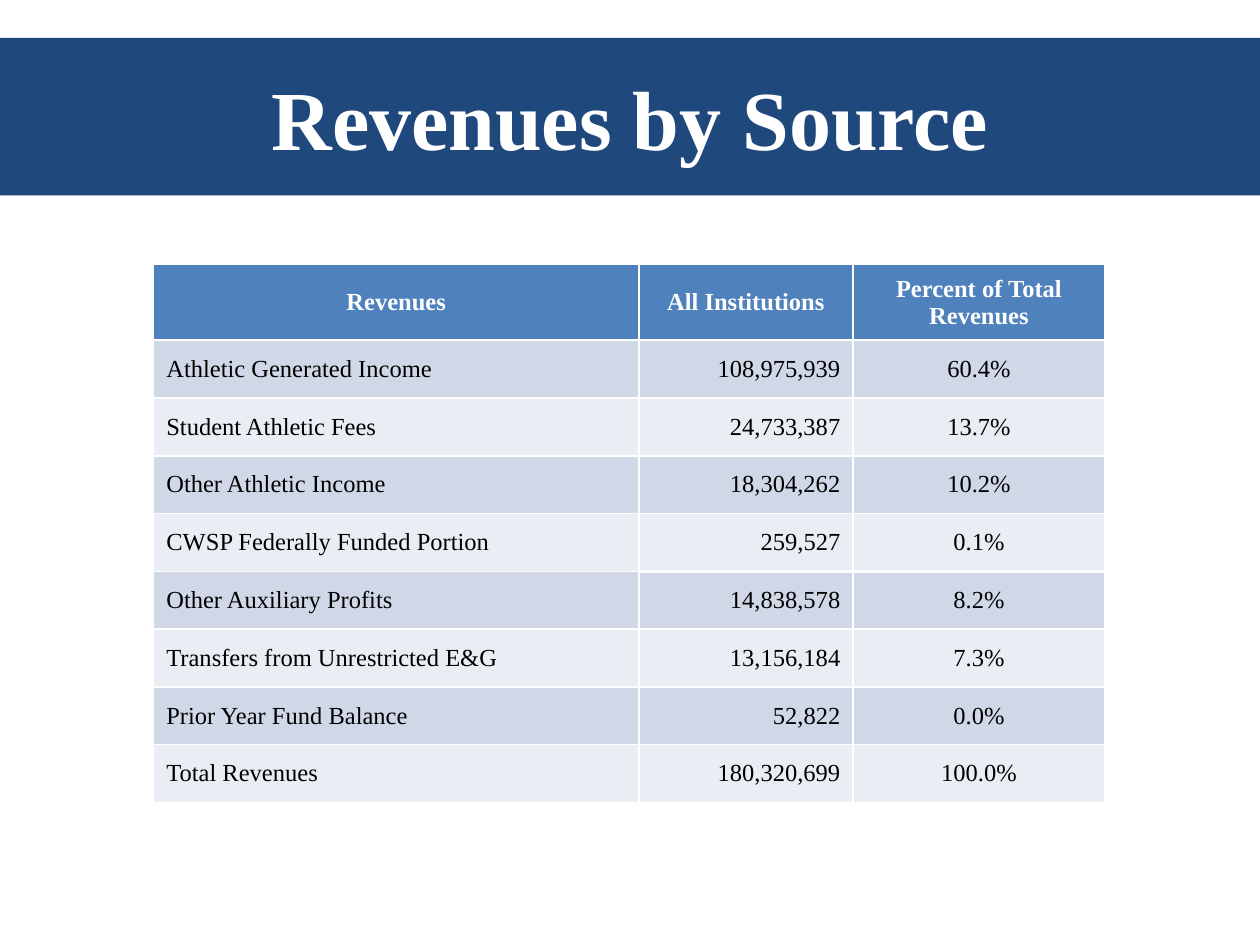
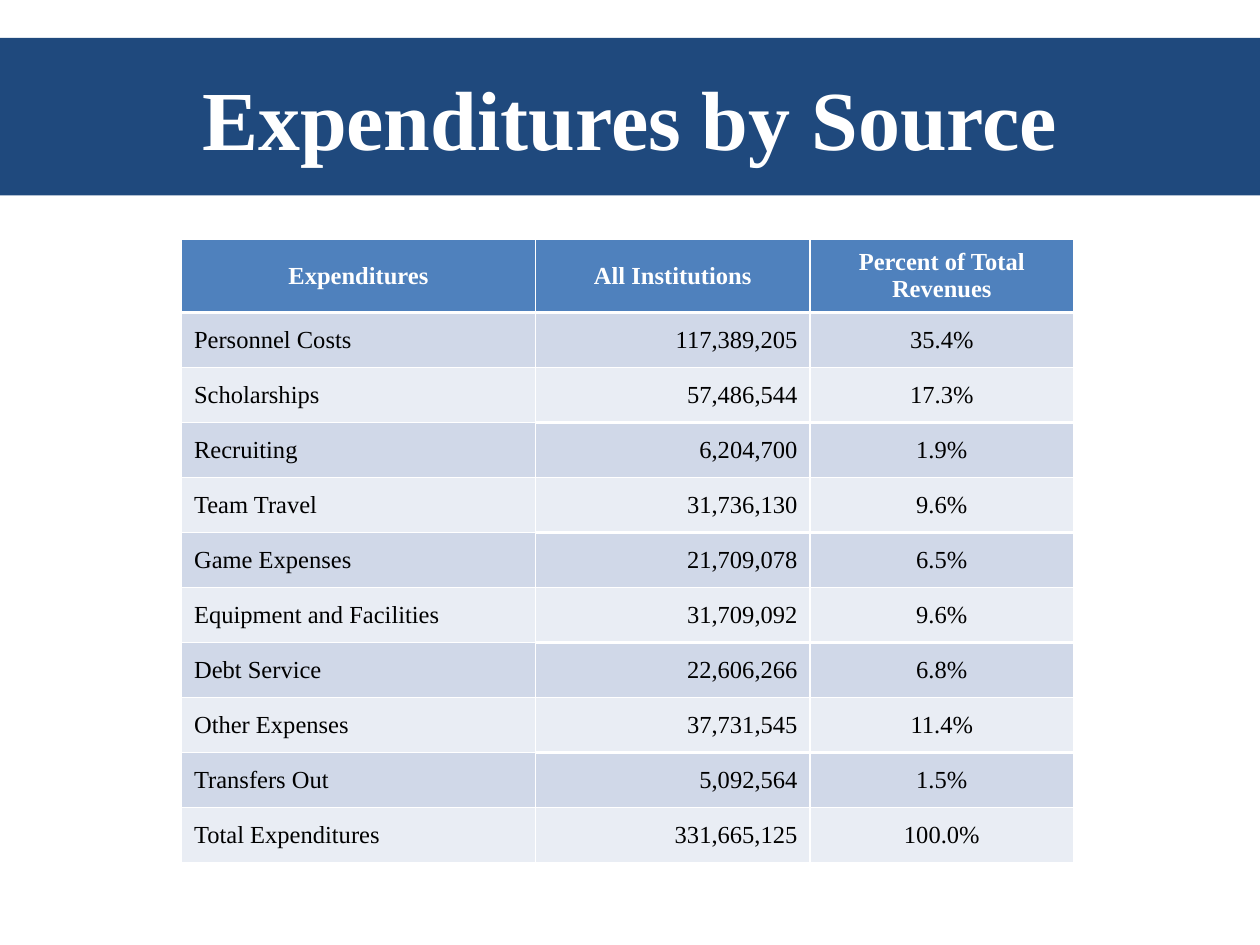
from lxml import etree
from pptx import Presentation
from pptx import util as u
from pptx.dml.color import RGBColor
from pptx.enum import shapes, text
from pptx.oxml.ns import qn

COLORS = {"band": "1F497D", "header": "4F81BD", "odd": "D0D8E8",
          "even": "E9EDF4", "white": "FFFFFF", "black": "000000"}
FONT = "Times New Roman"
TITLE = {"name": FONT, "size": u.Pt(48), "bold": True}
HEADER = {"name": FONT, "size": u.Pt(14), "bold": True}
BODY = {"name": FONT, "size": u.Pt(14), "bold": False}
ALIGN = text.PP_ALIGN
BODY_ALIGNS = (ALIGN.LEFT, ALIGN.RIGHT, ALIGN.CENTER)

REVENUES = [
    ("Revenues", "All Institutions", "Percent of Total Revenues"),
    ("Athletic Generated Income", "108,975,939", "60.4%"),
    ("Student Athletic Fees", "24,733,387", "13.7%"),
    ("Other Athletic Income", "18,304,262", "10.2%"),
    ("CWSP Federally Funded Portion", "259,527", "0.1%"),
    ("Other Auxiliary Profits", "14,838,578", "8.2%"),
    ("Transfers from Unrestricted E&G", "13,156,184", "7.3%"),
    ("Prior Year Fund Balance", "52,822", "0.0%"),
    ("Total Revenues", "180,320,699", "100.0%"),
]
EXPENDITURES = [
    ("Expenditures", "All Institutions", "Percent of Total Revenues"),
    ("Personnel Costs", "117,389,205", "35.4%"),
    ("Scholarships", "57,486,544", "17.3%"),
    ("Recruiting", "6,204,700", "1.9%"),
    ("Team Travel", "31,736,130", "9.6%"),
    ("Game Expenses", "21,709,078", "6.5%"),
    ("Equipment and Facilities", "31,709,092", "9.6%"),
    ("Debt Service", "22,606,266", "6.8%"),
    ("Other Expenses", "37,731,545", "11.4%"),
    ("Transfers Out", "5,092,564", "1.5%"),
    ("Total Expenditures", "331,665,125", "100.0%"),
]


def rgb(name):
    return RGBColor.from_string(COLORS[name])


def fill_solid(target, color):
    target.fill.solid()
    target.fill.fore_color.rgb = rgb(color)


def write(tf, words, fmt, color, align):
    p = tf.paragraphs[0]
    p.alignment = align
    r = p.add_run()
    r.text = words
    for key, value in fmt.items():
        setattr(r.font, key, value)
    r.font.color.rgb = rgb(color)


def add_title_band(s, words):
    sp = s.shapes.add_shape(shapes.MSO_SHAPE.RECTANGLE, 0, u.Inches(0.3),
                            u.Inches(10), u.Inches(1.25))
    sp.shadow.inherit = False
    fill_solid(sp, "band")
    sp.line.fill.background()
    tf = sp.text_frame
    tf.word_wrap = True
    tf.vertical_anchor = text.MSO_ANCHOR.MIDDLE
    write(tf, words, TITLE, "white", ALIGN.CENTER)


def set_borders(cell, widths):
    """Draw white edges; widths maps L, R, T, B to points."""
    tc_pr = cell._tc.get_or_add_tcPr()
    for side, width in widths.items():
        ln = etree.SubElement(tc_pr, qn(f"a:ln{side}"), w=str(u.Pt(width)))
        fill = etree.SubElement(ln, qn("a:solidFill"))
        etree.SubElement(fill, qn("a:srgbClr"), val=COLORS["white"])


def add_money_table(s, rows, left, top, height, widths, header_height):
    count = len(rows)
    table = s.shapes.add_table(count, len(widths), u.Inches(left), u.Inches(top),
                               u.Inches(sum(widths)), u.Inches(height)).table
    for column, width in zip(table.columns, widths):
        column.width = u.Inches(width)
    body_height = (height - header_height) / (count - 1)

    def edge(i, j):
        """Width of the line above row i: heavier above the darker rows."""
        heavy = i % 2 and i < count and (i == 1 or j > 0)
        return 1.5 if heavy else 1

    for i, row in enumerate(rows):
        table.rows[i].height = u.Inches(body_height if i else header_height)
        for j, words in enumerate(row):
            cell = table.cell(i, j)
            cell.vertical_anchor = text.MSO_ANCHOR.MIDDLE
            set_borders(cell, {"L": 1, "R": 1, "T": edge(i, j), "B": edge(i + 1, j)})
            if i == 0:
                fill_solid(cell, "header")
                write(cell.text_frame, words, HEADER, "white", ALIGN.CENTER)
            else:
                fill_solid(cell, "odd" if i % 2 else "even")
                write(cell.text_frame, words, BODY, "black", BODY_ALIGNS[j])


def add_table_slide(prs, title, rows, **layout):
    s = prs.slides.add_slide(prs.slide_layouts[6])
    add_title_band(s, title)
    add_money_table(s, rows, **layout)


def main():
    prs = Presentation()
    prs.slide_width, prs.slide_height = u.Inches(10), u.Inches(7.5)

    # Revenues
    add_table_slide(prs, "Revenues by Source", REVENUES, left=1.22, top=2.1,
                    height=4.27, widths=(3.85, 1.7, 2), header_height=0.6)
    # Expenditures
    add_table_slide(prs, "Expenditures by Source", EXPENDITURES, left=1.44, top=1.9,
                    height=4.95, widths=(2.81, 2.18, 2.09), header_height=0.58)

    prs.save("out.pptx")


if __name__ == "__main__":
    main()
